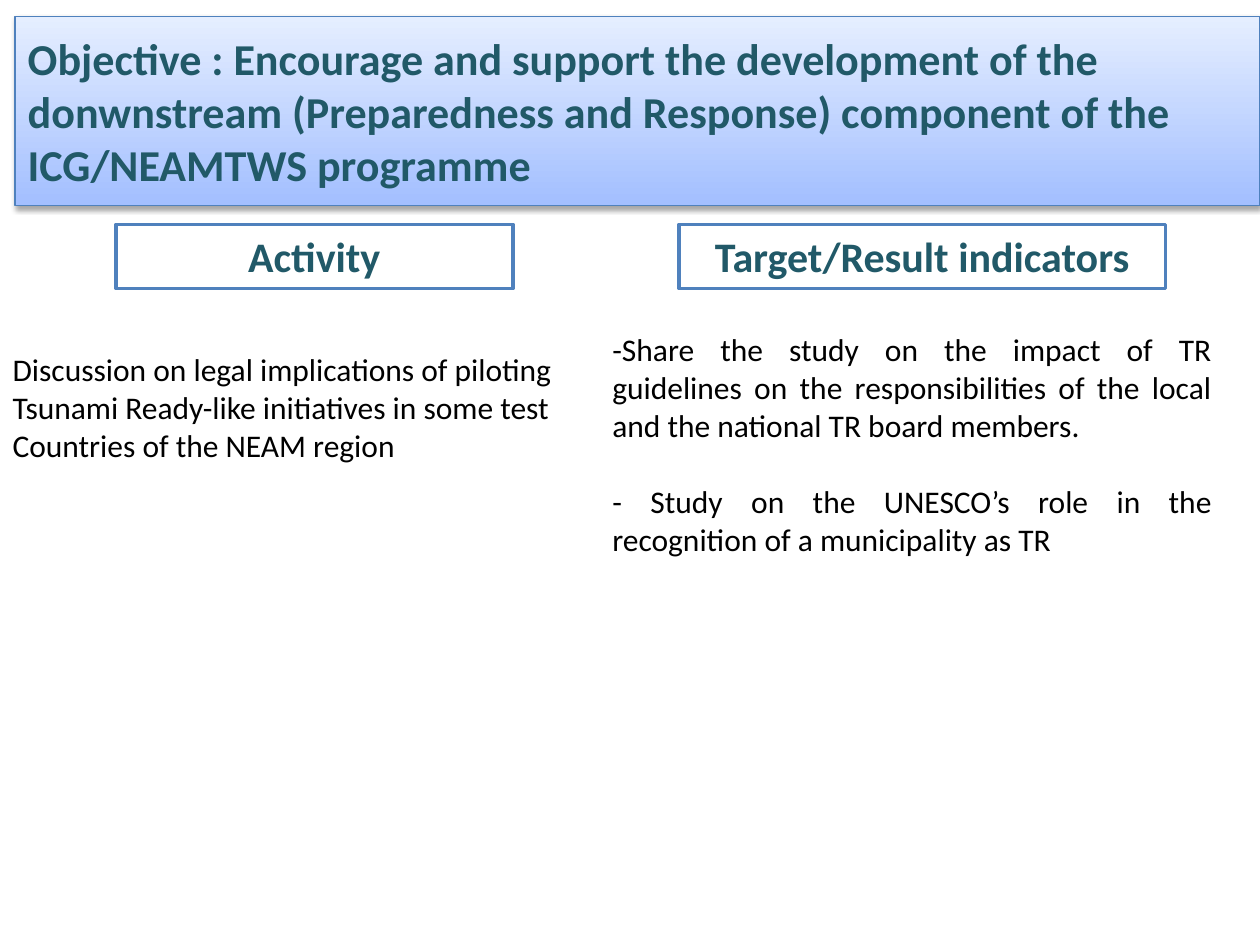
from pptx import Presentation
from pptx.dml.color import RGBColor
from pptx.enum.text import MSO_ANCHOR as Anchor, MSO_AUTO_SIZE as Auto, PP_ALIGN as Align
from pptx.oxml import parse_xml
from pptx.oxml.ns import nsdecls
from pptx.util import Inches, Pt

COLORS = {"teal": "215968", "blue": "4F81BD", "white": "FFFFFF",
          "black": "000000", "pale": "E5EEFF", "sky": "A3BFFF"}

TITLE = ("Objective : Encourage and support the development of the donwnstream "
         "(Preparedness and Response) component of the ICG/NEAMTWS programme")
TITLE_BOX = (0.12, 0.13, 9.88, 1.5)

# Placeholder index, box (left, top, width, height), text
HEADS = [
    (1, (0.92, 1.78, 3.15, 0.51), "Activity"),
    (3, (5.39, 1.78, 3.86, 0.51), "Target/Result indicators"),
]

# Placeholder index, box, alignment, paragraphs
BODIES = [
    (2, (0, 2.73, 4.61, 1.01), Align.LEFT, [
        "Discussion on legal implications of piloting Tsunami Ready-like "
        "initiatives in some test Countries of the NEAM region"]),
    (4, (4.76, 2.57, 4.96, 2.52), Align.JUSTIFY, [
        "-Share the study on the impact of TR guidelines on the "
        "responsibilities of the local and the national TR board members.",
        "- Study on the UNESCO’s role in the recognition of a municipality as TR"]),
]

SHADOW = (f'<a:effectLst {nsdecls("a")}>'
          '<a:outerShdw blurRad="40000" dist="23000" dir="5400000" rotWithShape="0">'
          '<a:srgbClr val="000000"><a:alpha val="35000"/></a:srgbClr>'
          '</a:outerShdw></a:effectLst>')


def rgb(name):
    return RGBColor.from_string(COLORS[name])


def place(shape, box):
    shape.left, shape.top, shape.width, shape.height = map(Inches, box)


def write(shape, lines, size, color, bold, align, anchor=Anchor.TOP):
    """Fill a placeholder with unbulleted paragraphs."""
    frame = shape.text_frame
    frame.text = "\n".join(lines)
    frame.word_wrap = True
    frame.auto_size = Auto.NONE
    frame.vertical_anchor = anchor
    for para in frame.paragraphs:
        para.alignment = align
        para.space_before = Pt(0)
        para.space_after = Pt(22 if para.text != lines[-1] else 0)
        props = para._p.get_or_add_pPr()
        props.set("marL", "0")
        props.set("indent", "0")
        props.append(parse_xml(f'<a:buNone {nsdecls("a")}/>'))
        for run in para.runs:
            font = run.font
            font.name, font.size, font.bold = "Calibri", Pt(size), bold
            font.color.rgb = rgb(color)


def outline(shape, width):
    shape.line.color.rgb = rgb("blue")
    shape.line.width = Pt(width)


def main():
    deck = Presentation()
    deck.slide_width, deck.slide_height = Inches(10), Inches(7.5)
    slide = deck.slides.add_slide(deck.slide_layouts.get_by_name("Comparison"))
    holders = {p.placeholder_format.idx: p for p in slide.placeholders}

    title = slide.shapes.title
    place(title, TITLE_BOX)
    write(title, [TITLE], 25.2, "teal", True, Align.LEFT, Anchor.MIDDLE)
    title.fill.gradient()
    title.fill.gradient_angle = 270
    for stop, name in zip(title.fill.gradient_stops, ("pale", "sky")):
        stop.color.rgb = rgb(name)
    outline(title, 0.75)
    title._element.spPr.append(parse_xml(SHADOW))

    for idx, box, text in HEADS:
        head = holders[idx]
        place(head, box)
        write(head, [text], 24, "teal", True, Align.CENTER)
        head.fill.solid()
        head.fill.fore_color.rgb = rgb("white")
        outline(head, 2)

    for idx, box, align, lines in BODIES:
        place(holders[idx], box)
        write(holders[idx], lines, 18, "black", False, align)

    deck.save("out.pptx")


if __name__ == "__main__":
    main()
